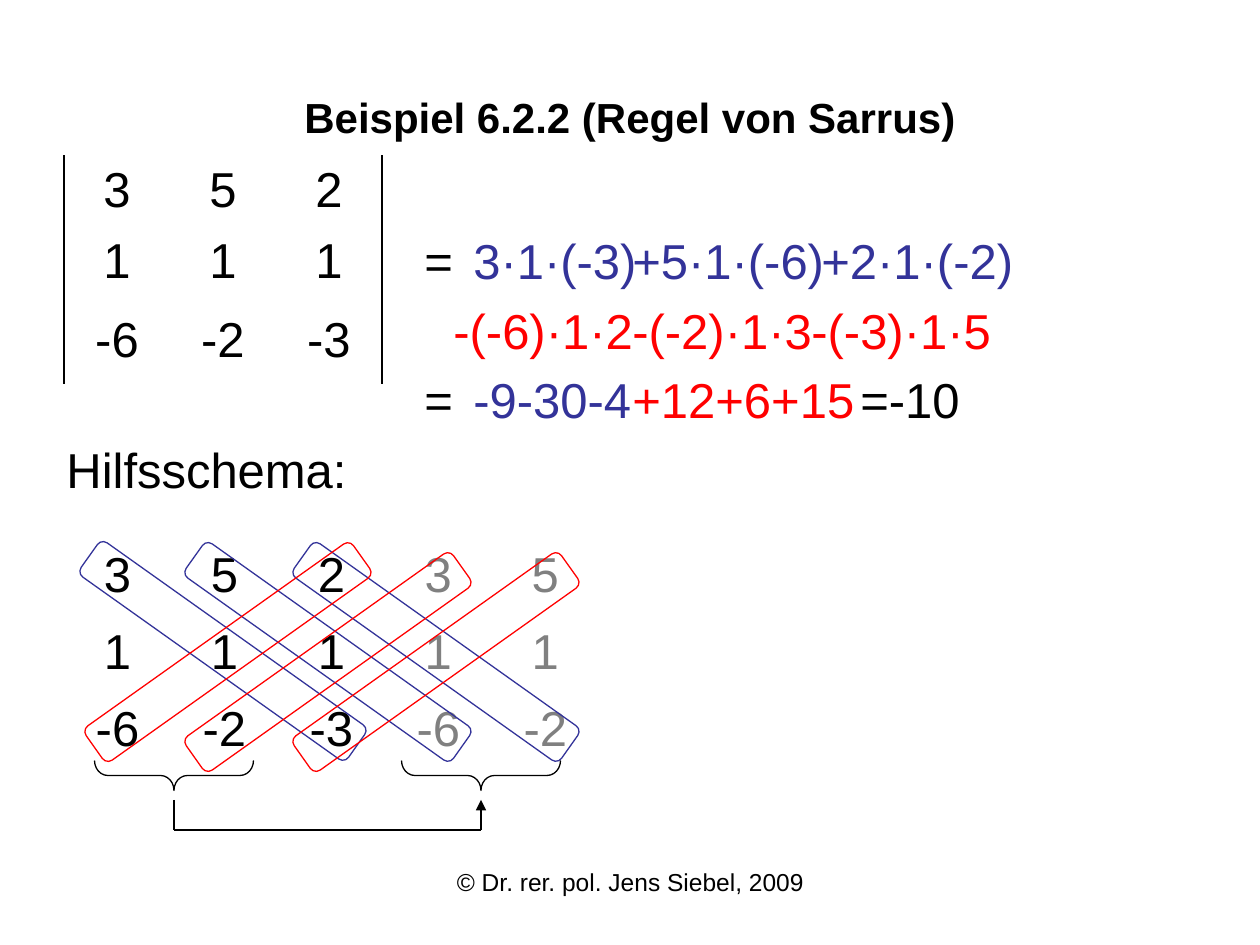
from typing import NamedTuple

from lxml import etree
from pptx import Presentation
from pptx import util as u
from pptx.dml.color import RGBColor
from pptx.enum import shapes, text
from pptx.oxml import ns

PX = u.Inches(1) / 126
BLACK = RGBColor(0x00, 0x00, 0x00)
GREY = RGBColor(0x80, 0x80, 0x80)
BLUE = RGBColor(0x33, 0x33, 0x99)
RED = RGBColor(0xFF, 0x00, 0x00)
NO_STYLE = "{2D5ABB26-0587-4C30-8999-92F81FD0307C}"
MATRIX = [["3", "5", "2"], ["1", "1", "1"], ["-6", "-2", "-3"]]


class Label(NamedTuple):
    words: str
    left: int
    top: int
    width: int
    color: RGBColor = BLACK
    height: int = 72
    size: int = 28
    bold: bool = False
    align: text.PP_ALIGN = text.PP_ALIGN.LEFT
    anchor: text.MSO_ANCHOR = text.MSO_ANCHOR.TOP


class Band(NamedTuple):
    left: int
    top: int
    angle: float
    color: RGBColor


def px(*lengths: int) -> list[u.Emu]:
    return [u.Emu(round(length * PX)) for length in lengths]


def write(paragraph, words: str, size: int, color: RGBColor, bold: bool, align) -> None:
    paragraph.alignment = align
    run = paragraph.add_run()
    run.text = words
    for name, value in {"name": "Arial", "size": u.Pt(size), "bold": bold}.items():
        setattr(run.font, name, value)
    run.font.color.rgb = color


def add_label(slide, label: Label) -> None:
    frame = slide.shapes.add_textbox(
        *px(label.left, label.top, label.width, label.height)).text_frame
    frame.word_wrap = True
    frame.vertical_anchor = label.anchor
    write(frame.paragraphs[0], label.words, label.size, label.color, label.bold, label.align)


def add_matrix(slide, rows: list[list[str]], left: int, top: int, column: int,
               heights: list[int], anchor: text.MSO_ANCHOR):
    frame = slide.shapes.add_table(
        len(rows), len(rows[0]), *px(left, top, column * len(rows[0]), sum(heights)))
    table = frame.table
    table.first_row = table.horz_banding = False
    table._tbl.tblPr.find(ns.qn("a:tableStyleId")).text = NO_STYLE
    for grid_column in table.columns:
        grid_column.width = px(column)[0]
    for r, (row, height) in enumerate(zip(rows, heights)):
        table.rows[r].height = px(height)[0]
        for c, number in enumerate(row):
            cell = table.cell(r, c)
            cell.vertical_anchor = anchor
            cell.fill.background()
            # Columns past the third repeat the first ones
            write(cell.text_frame.paragraphs[0], number, 28,
                  BLACK if c < 3 else GREY, False, text.PP_ALIGN.CENTER)
    return table


def add_border(cell, side: str) -> None:
    border = etree.Element(ns.qn(f"a:{side}"), w=str(u.Pt(1)))
    fill = etree.SubElement(border, ns.qn("a:solidFill"))
    etree.SubElement(fill, ns.qn("a:srgbClr"), val=str(BLACK))
    cell._tc.get_or_add_tcPr().insert(0, border)


def add_outline(slide, kind, box: tuple, angle: float, adjustments: list[float],
                color: RGBColor) -> None:
    shape = slide.shapes.add_shape(kind, *px(*box))
    shape.rotation = angle
    shape.shadow.inherit = False
    shape.fill.background()
    shape.line.color.rgb = color
    shape.line.width = u.Pt(0.75)
    for index, value in enumerate(adjustments):
        shape.adjustments[index] = value


def add_line(slide, start: tuple[int, int], end: tuple[int, int], arrow: bool) -> None:
    line = slide.shapes.add_connector(shapes.MSO_CONNECTOR.STRAIGHT, *px(*start, *end))
    line.line.color.rgb = BLACK
    line.line.width = u.Pt(0.75)
    if arrow:
        etree.SubElement(line.line._get_or_add_ln(), ns.qn("a:tailEnd"), type="triangle")
    etree.SubElement(line._element.spPr, ns.qn("a:effectLst"))


LABELS = [
    Label("© Dr. rer. pol. Jens Siebel, 2009", 431, 861, 399, height=66, size=14,
          align=text.PP_ALIGN.CENTER),
    Label("Beispiel 6.2.2 (Regel von Sarrus)", 63, 38, 1134, height=158, size=24, bold=True,
          align=text.PP_ALIGN.CENTER, anchor=text.MSO_ANCHOR.MIDDLE),
    Label("Hilfsschema:", 54, 433, 486),
    # Products along the diagonals
    Label("=", 412, 224, 69),
    Label("3·1·(-3)", 461, 224, 228, BLUE),
    Label("+5·1·(-6)", 620, 224, 228, BLUE),
    Label("+2·1·(-2)", 809, 224, 248, BLUE),
    Label("-(-6)·1·2", 441, 294, 218, RED),
    Label("-(-2)·1·3", 620, 294, 208, RED),
    Label("-(-3)·1·5", 799, 294, 208, RED),
    # Result
    Label("=", 412, 363, 69),
    Label("-9-30-4", 461, 363, 248, BLUE),
    Label("+12+6+15", 620, 363, 268, RED),
    Label("=-10", 848, 363, 149),
]
BANDS = [
    Band(59, 630, 35.4, BLUE),
    Band(164, 631, 35.4, BLUE),
    Band(272, 631, 35.4, BLUE),
    Band(64, 631, 324.6, RED),
    Band(164, 641, 324.6, RED),
    Band(272, 641, 324.6, RED),
]
COPY_PATH = [(174, 800), (174, 830), (481, 830), (481, 800)]


def main() -> None:
    deck = Presentation()
    deck.slide_width, deck.slide_height = u.Inches(10), u.Inches(7.5)
    slide = deck.slides.add_slide(deck.slide_layouts[6])

    # Determinant between two vertical bars
    determinant = add_matrix(slide, MATRIX, 64, 155, 106, [71, 71, 87], text.MSO_ANCHOR.MIDDLE)
    for r in range(3):
        add_border(determinant.cell(r, 0), "lnL")
        add_border(determinant.cell(r, 2), "lnR")

    # Scheme with the first two columns repeated
    add_matrix(slide, [row + row[:2] for row in MATRIX], 64, 542, 107, [77] * 3,
               text.MSO_ANCHOR.TOP)

    # Braces and the arrow between them
    for left in (159, 466):
        add_outline(slide, shapes.MSO_SHAPE.LEFT_BRACE, (left, 696, 30, 159), 270,
                    [0.445, 0.5], BLACK)
    for start, end in zip(COPY_PATH, COPY_PATH[1:]):
        add_line(slide, start, end, arrow=end == COPY_PATH[-1])

    # Diagonals
    for band in BANDS:
        add_outline(slide, shapes.MSO_SHAPE.ROUNDED_RECTANGLE, (band.left, band.top, 328, 42),
                    band.angle, [0.167], band.color)

    for label in LABELS:
        add_label(slide, label)
    deck.save("out.pptx")


if __name__ == "__main__":
    main()
